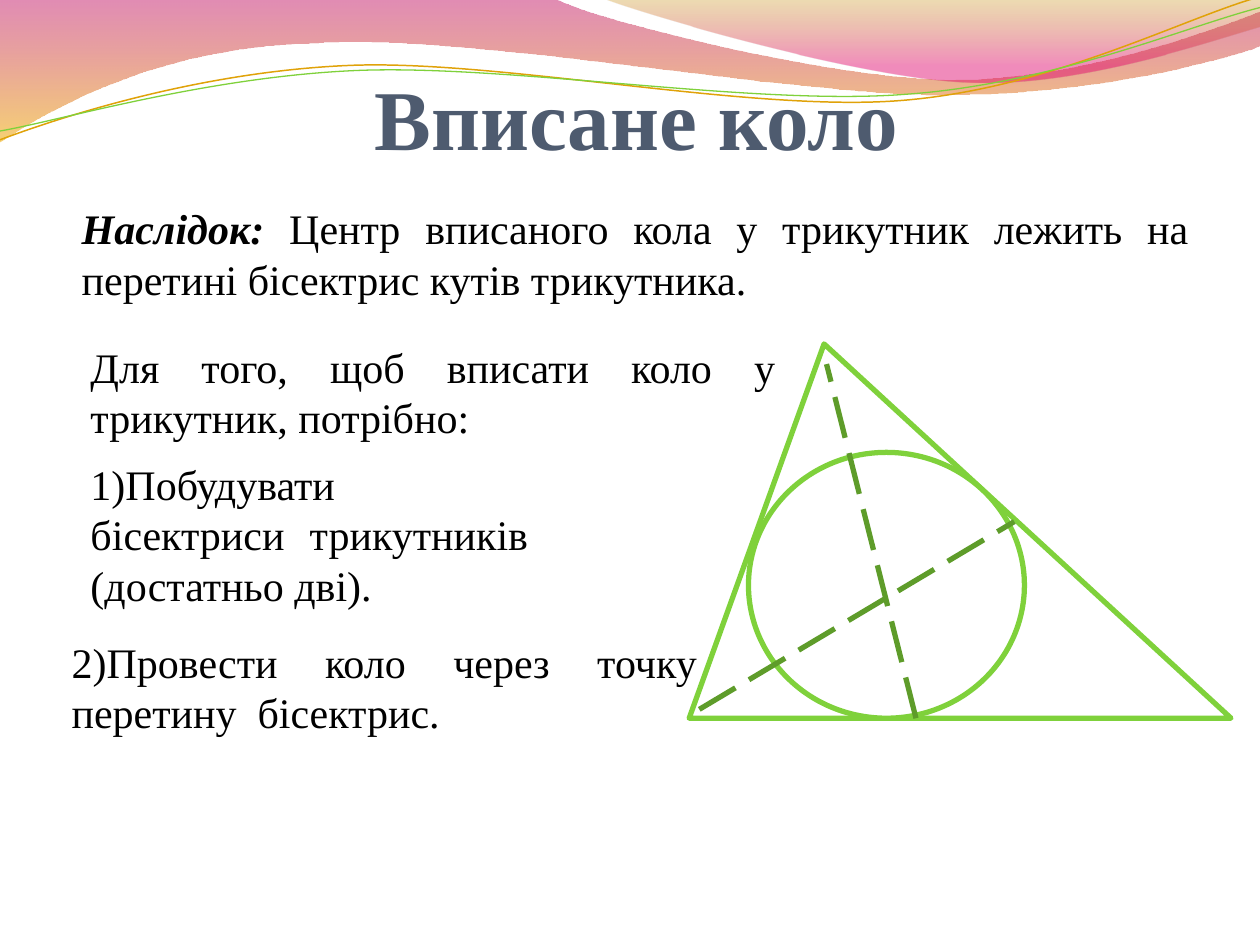
from lxml import etree
from pptx import Presentation
from pptx.dml.color import RGBColor
from pptx.enum.dml import MSO_LINE
from pptx.enum.shapes import MSO_CONNECTOR, MSO_SHAPE
from pptx.enum.text import MSO_ANCHOR, MSO_AUTO_SIZE, PP_ALIGN
from pptx.oxml.ns import qn
from pptx.util import Inches, Pt

TRIANGLE = MSO_SHAPE.ISOSCELES_TRIANGLE
OVAL = MSO_SHAPE.OVAL
STRAIGHT = MSO_CONNECTOR.STRAIGHT
LONG_DASH = MSO_LINE.LONG_DASH
BOTTOM = MSO_ANCHOR.BOTTOM
FIT_SHAPE = MSO_AUTO_SIZE.SHAPE_TO_FIT_TEXT
FIXED_SIZE = MSO_AUTO_SIZE.NONE
CENTER = PP_ALIGN.CENTER
JUSTIFY = PP_ALIGN.JUSTIFY

TITLE_ONLY = 5
FONT = "Times New Roman"
COLORS = {
    "white": "FFFFFF", "text": "000000", "title": "4E5B6F",
    "green": "7FD13B", "dark_green": "5E9C2A", "gold": "E0A209",
    "magenta": "BD0059", "orange": "F0AB00", "ochre": "C38B00", "pink": "E1006B",
}

LEFT_WAVE = [
    (0, 0), (4.4, -0.01), (4.76, 0.17, 6.64, 0.63, 7.58, 0.63),
    (8.53, 0.63, 9.58, 0.26, 10, 0.09), (10.01, 0.36),
    (9.83, 0.44, 8.7, 0.76, 7.46, 0.75), (6.22, 0.75, 3.82, 0.28, 2.57, 0.34),
    (1.29, 0.36, 0.46, 0.83, -0.01, 1.13),
]
RIGHT_WAVE = [
    (4.79, -0.01), (5.09, 0.11, 6.82, 0.62, 7.69, 0.65),
    (8.56, 0.69, 9.61, 0.32, 10, 0.21), (10, 0),
]
GOLD_CURVE = [
    (0, 1.11), (0.48, 0.93, 1.58, 0.57, 2.77, 0.52),
    (3.95, 0.47, 5.93, 0.89, 7.13, 0.8), (8.33, 0.71, 9.38, 0.15, 9.98, -0.02),
]
GREEN_CURVE = [
    (0, 1.04), (0.47, 0.96, 1.64, 0.61, 2.83, 0.56),
    (4.03, 0.51, 5.97, 0.84, 7.17, 0.75), (8.36, 0.67, 9.41, 0.21, 10, 0.06),
]


def color(name):
    return RGBColor.from_string(COLORS[name])


def to_lengths(values):
    return [Inches(value) for value in values]


def bend_segment(shape, line_segment, controls):
    line_segment.tag = qn("a:cubicBezTo")
    for point in list(line_segment):
        line_segment.remove(point)
    lengths = to_lengths(controls)
    for x, y in zip(lengths[::2], lengths[1::2]):
        point = etree.SubElement(line_segment, qn("a:pt"))
        point.set("x", str(x - shape.left))
        point.set("y", str(y - shape.top))


def add_outline(slide, segments, close):
    anchors = [to_lengths(segment[-2:]) for segment in segments]
    builder = slide.shapes.build_freeform(*anchors[0])
    builder.add_line_segments(anchors[1:], close=close)
    shape = builder.convert_to_shape()
    shape.shadow.inherit = False
    line_segments = list(shape.element.iter(qn("a:lnTo")))
    for line_segment, segment in zip(line_segments, segments[1:]):
        if len(segment) == 6:
            bend_segment(shape, line_segment, segment)
    return shape


def add_wave(slide, segments, stops):
    shape = add_outline(slide, segments, True)
    shape.line.fill.background()
    shape.fill.gradient()
    shape.fill.gradient_angle = 270
    for stop, (position, name, _) in zip(shape.fill.gradient_stops, stops):
        stop.position = position
        stop.color.rgb = color(name)
    for element, (_, _, opacity) in zip(shape.element.iter(qn("a:srgbClr")), stops):
        etree.SubElement(element, qn("a:alpha")).set("val", str(opacity * 1000))


def add_curve(slide, segments, name, width):
    shape = add_outline(slide, segments, False)
    shape.fill.background()
    shape.line.color.rgb = color(name)
    shape.line.width = Pt(width)


def add_header_waves(slide):
    add_wave(slide, LEFT_WAVE, [(0, "magenta", 45), (1, "orange", 55)])
    add_wave(slide, RIGHT_WAVE, [(0, "ochre", 30), (0.8, "pink", 45)])
    add_curve(slide, GOLD_CURVE, "gold", 0.85)
    add_curve(slide, GREEN_CURVE, "green", 0.75)


def place_title(slide, box, text):
    title = slide.shapes.title
    title.left, title.top, title.width, title.height = to_lengths(box)
    title.element.getparent().append(title.element)
    frame = title.text_frame
    frame.text = text
    frame.auto_size = FIXED_SIZE
    frame.vertical_anchor = BOTTOM
    frame.margin_left = frame.margin_right = frame.margin_bottom = 0
    frame.margin_top = Inches(0.05)
    paragraph = frame.paragraphs[0]
    paragraph.alignment = CENTER
    paragraph.line_spacing = 0.9
    paragraph.font.name = FONT
    paragraph.font.size = Pt(48.6)
    paragraph.font.bold = True
    paragraph.font.color.rgb = color("title")


def add_text(slide, box, text, lead=""):
    frame = slide.shapes.add_textbox(*to_lengths(box)).text_frame
    frame.word_wrap = True
    frame.auto_size = FIT_SHAPE
    paragraph = frame.paragraphs[0]
    paragraph.alignment = JUSTIFY
    paragraph.font.name = FONT
    paragraph.font.size = Pt(24)
    paragraph.font.color.rgb = color("text")
    if lead:
        run = paragraph.add_run()
        run.text = lead
        run.font.bold = run.font.italic = True
    paragraph.add_run().text = text


def add_figure_shape(slide, kind, box):
    shape = slide.shapes.add_shape(kind, *to_lengths(box))
    shape.shadow.inherit = False
    shape.fill.solid()
    shape.fill.fore_color.rgb = color("white")
    shape.line.color.rgb = color("green")
    shape.line.width = Pt(3)
    return shape


def add_bisector(slide, start, end):
    connector = slide.shapes.add_connector(STRAIGHT, *to_lengths(start + end))
    connector.line.color.rgb = color("dark_green")
    connector.line.width = Pt(3)
    connector.line.dash_style = LONG_DASH
    etree.SubElement(connector.element.spPr, qn("a:effectLst"))


def add_triangle(slide, box):
    triangle = add_figure_shape(slide, TRIANGLE, box)
    triangle.adjustments[0] = 0.249


def add_circle_and_bisectors(slide, box):
    left, top, width, height = box
    bottom = top + height
    add_figure_shape(slide, OVAL, (left + 0.47, top + 0.86, 2.19, 2.11))
    add_bisector(slide, (left + 1.8, bottom), (left + 1.09, top + 0.16))
    add_bisector(slide, (left + 0.08, bottom - 0.07), (left + 2.58, top + 1.41))


def main():
    presentation = Presentation()
    presentation.slide_width = Inches(10)
    presentation.slide_height = Inches(7.5)
    slide = presentation.slides.add_slide(presentation.slide_layouts[TITLE_ONLY])
    figure_box = (5.47, 2.73, 4.3, 2.97)

    add_header_waves(slide)
    place_title(slide, (0.55, 0.55, 9, 0.79), "Вписане коло")
    add_text(slide, (0.55, 1.56, 8.98, 0.91),
             "Центр вписаного кола у трикутник лежить на перетині бісектрис кутів трикутника.",
             lead="Наслідок: ")
    add_triangle(slide, figure_box)
    add_text(slide, (0.62, 2.66, 5.63, 0.91),
             "Для того, щоб вписати коло у трикутник, потрібно:")
    add_text(slide, (0.62, 3.59, 3.67, 1.31),
             "1)Побудувати бісектриси трикутників (достатньо дві).")
    add_text(slide, (0.47, 5, 5.16, 0.91),
             "2)Провести коло через точку перетину  бісектрис.")
    add_circle_and_bisectors(slide, figure_box)
    presentation.save("out.pptx")


if __name__ == "__main__":
    main()
